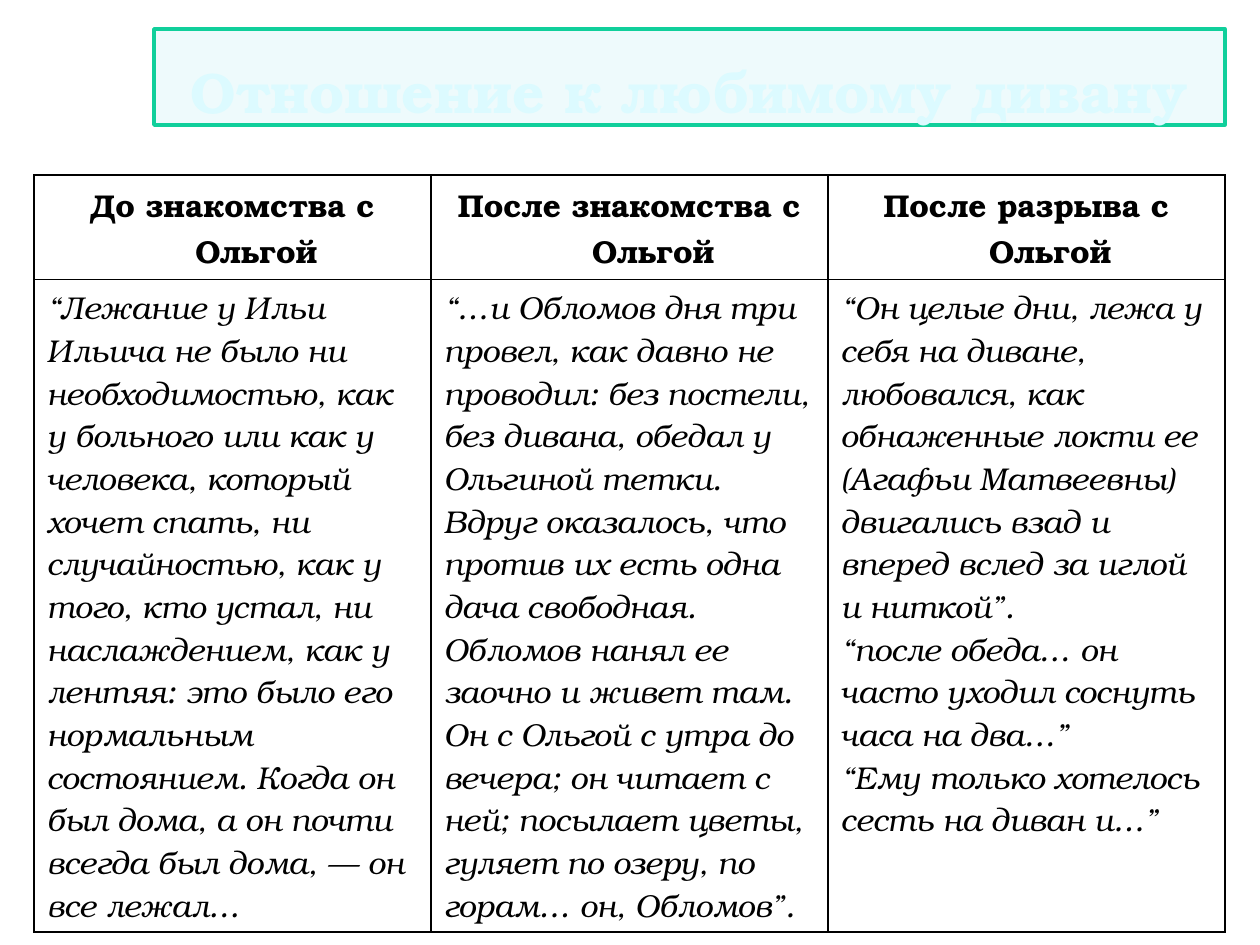
"""Build a slide that compares three stages of the hero's bond with his sofa."""
import pptx
import pptx.util
import pptx.dml.color
import pptx.enum.text
import pptx.oxml
import lxml.etree

PX = 914400 // 126
FONT = "TeX Gyre Bonum"
NS = 'xmlns:a="http://schemas.openxmlformats.org/drawingml/2006/main"'
ALIGN = pptx.enum.text.PP_ALIGN
HEADS = ["До знакомства с Ольгой", "После знакомства с Ольгой", "После разрыва с Ольгой"]
QUOTES = [
    "“Лежание у Ильи Ильича не было ни необходимостью, как у больного или как у "
    "человека, который хочет спать, ни случайностью, как у того, кто устал, ни "
    "наслаждением, как у лентяя: это было его нормальным состоянием. Когда он был "
    "дома, а он почти всегда был дома, — он все лежал…",
    "“…и Обломов дня три провел, как давно не проводил: без постели, без дивана, "
    "обедал у Ольгиной тетки.\vВдруг оказалось, что против их есть одна дача "
    "свободная. Обломов нанял ее заочно и живет там. Он с Ольгой с утра до вечера; "
    "он читает с ней; посылает цветы, гуляет по озеру, по горам… он, Обломов”.",
    "“Он целые дни, лежа у себя на диване, любовался, как обнаженные локти ее "
    "(Агафьи Матвеевны) двигались взад и вперед вслед за иглой и ниткой”.\v"
    "“после обеда… он часто уходил соснуть часа на два…”\v"
    "“Ему только хотелось сесть на диван и…”",
]


def rgb(code):
    return pptx.dml.color.RGBColor.from_string(code)


def style(run, size, color, bold, italic):
    run.font.name = FONT
    run.font.size = pptx.util.Pt(size)
    run.font.bold = bold
    run.font.italic = italic
    run.font.color.rgb = rgb(color)


deck = pptx.Presentation()
deck.slide_width = pptx.util.Inches(10)
deck.slide_height = pptx.util.Inches(7.5)
slide = deck.slides.add_slide(deck.slide_layouts[5])

title = slide.shapes.title
title.left, title.top, title.width, title.height = [n * PX for n in (154, 29, 1071, 96)]
title.fill.solid()
title.fill.fore_color.rgb = rgb("DBF5F9")
tint = title.fill._xPr.find(".//{*}srgbClr")
tint.append(pptx.oxml.parse_xml(f'<a:alpha {NS} val="47000"/>'))
title.line.color.rgb = rgb("10CF9B")
title.line.width = pptx.util.Pt(2)
frame = title.text_frame
frame.text = "Отношение к любимому дивану"
frame.word_wrap = True
frame.auto_size = pptx.enum.text.MSO_AUTO_SIZE.NONE
frame.vertical_anchor = pptx.enum.text.MSO_ANCHOR.BOTTOM
frame.margin_bottom = 0
frame.paragraphs[0].alignment = ALIGN.CENTER
run = frame.paragraphs[0].runs[0]
style(run, 32.4, "DCFAFF", True, False)
run.font._element.insert(0, pptx.oxml.parse_xml(
    f'<a:ln {NS} w="12700"><a:solidFill><a:srgbClr val="00637F"/></a:solidFill></a:ln>'))

table = slide.shapes.add_table(2, 3, 34 * PX, 175 * PX, 1191 * PX, 668 * PX).table
table.first_row = False
table.horz_banding = False
for col in table.columns:
    col.width = 397 * PX
for row, high in zip(table.rows, (88, 580)):
    row.height = high * PX

for r, texts in enumerate((HEADS, QUOTES)):
    head = r == 0
    for c, text in enumerate(texts):
        cell = table.cell(r, c)
        para = cell.text_frame.paragraphs[0]
        para.text = text
        para.alignment = ALIGN.CENTER if head else ALIGN.LEFT
        if head:
            props = para._p.get_or_add_pPr()
            props.set("marL", str(48 * PX))
            props.set("indent", str(-48 * PX))
        for run in para.runs:
            style(run, 18, "000000", head, not head)
        box = cell._tc.get_or_add_tcPr()
        for side in ("lnL", "lnR", "lnT", "lnB"):
            box.append(pptx.oxml.parse_xml(
                f'<a:{side} {NS} w="12700"><a:solidFill><a:srgbClr val="000000"/>'
                f'</a:solidFill></a:{side}>'))
        cell.fill.background()

deck.save("out.pptx")
